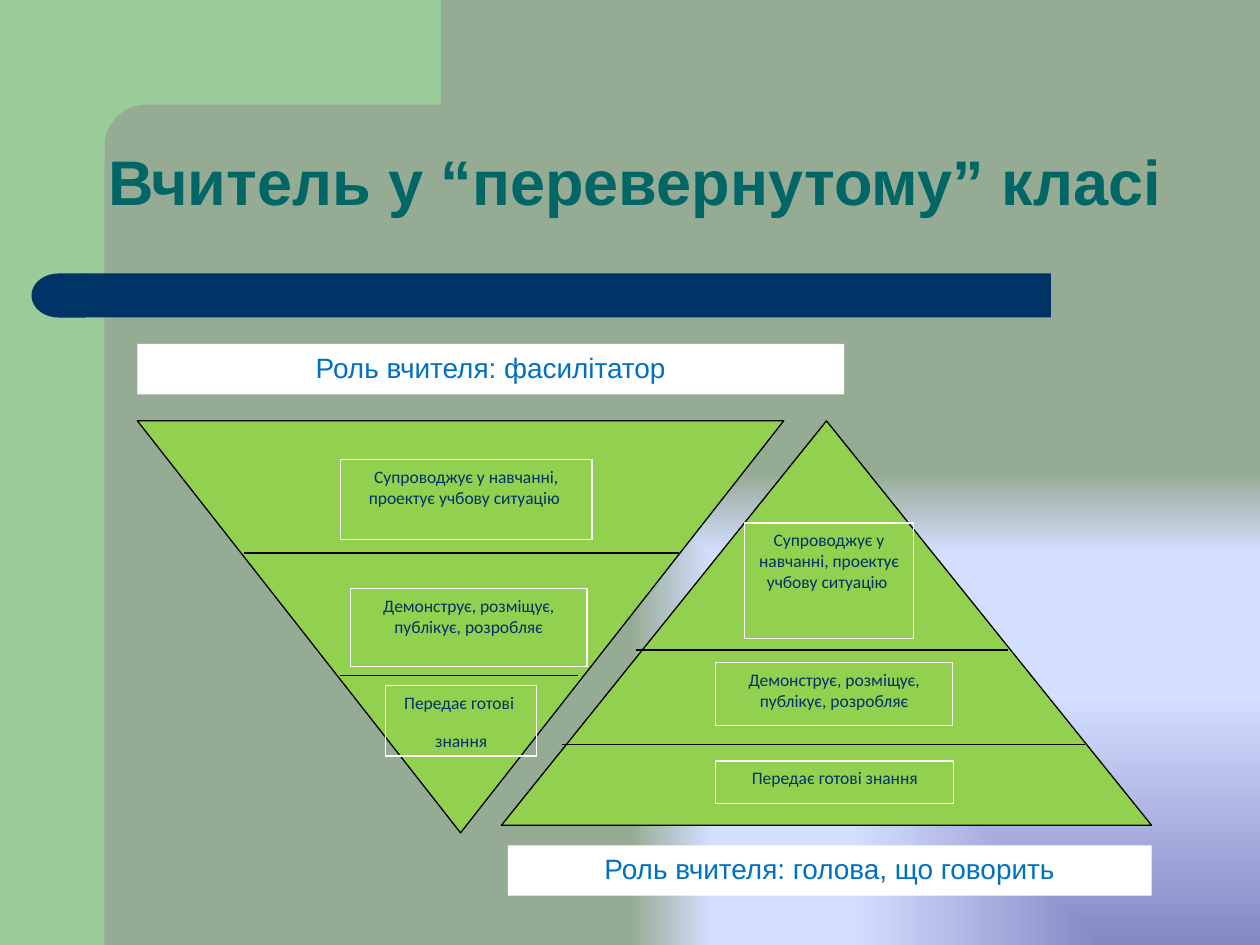
from math import cos, sin, pi
from pptx import Presentation
from pptx.util import Inches, Pt
from pptx.dml.color import RGBColor
from pptx.enum.shapes import MSO_SHAPE, MSO_CONNECTOR
from pptx.enum.text import PP_ALIGN, MSO_ANCHOR
from pptx.oxml import parse_xml
from pptx.oxml.ns import qn
from lxml.etree import SubElement

# Content: words, then left, top, width, height in inches
TITLE = "Вчитель у “перевернутому” класі", (0.39, 0.62, 9.3, 1.17)
GUIDE = "Супроводжує у навчанні, проектує учбову ситуацію "
SHOW = "Демонструє, розміщує, публікує, розробляє"
TELL = "Передає готові знання"

ROLES = [
    ("Роль вчителя: фасилітатор", (1.09, 2.73, 5.61, 0.4)),
    ("Роль вчителя: голова, що говорить", (4.03, 6.71, 5.11, 0.4)),
]
# Each pyramid: place, turn, dividers (x1, x2, y), labels
PYRAMIDS = [
    dict(at=(3.98, 3.34, 5.16, 3.21), turn=0,
         cuts=[(5.05, 8, 5.16), (4.46, 8.61, 5.91)],
         labels=[(GUIDE, (5.91, 4.15, 1.34, 0.92)),
                 (SHOW, (5.68, 5.26, 1.88, 0.5)),
                 (TELL, (5.68, 6.04, 1.89, 0.34))]),
    dict(at=(1.09, 3.34, 5.13, 3.27), turn=180,
         cuts=[(1.94, 5.39, 4.39), (2.7, 4.59, 5.36)],
         labels=[(GUIDE, (2.7, 3.65, 2, 0.63)),
                 (SHOW, (2.78, 4.67, 1.88, 0.62)),
                 ("Передає готові \nзнання", (3.06, 5.44, 1.2, 0.56))]),
]

THEME = dict(
    mint="99CC99", navy="003366", teal="006666", lime="92D050",
    blue="0070C0", white="FFFFFF", black="000000",
    head=36, role=16, label=10, line=0.75, sans="Arial", body="Calibri",
    back=[(0, "8488C4"), (53, "D4DEFF"), (83, "D4DEFF"), (100, "96AB94")],
)


def tint(name):
    return RGBColor.from_string(THEME[name])


def paint(shape, fill=None, line=None):
    shape.shadow.inherit = False
    if fill:
        shape.fill.solid()
        shape.fill.fore_color.rgb = tint(fill)
    else:
        shape.fill.background()
    if line:
        shape.line.color.rgb = tint(line)
        shape.line.width = Pt(THEME["line"])
    else:
        shape.line.fill.background()


def block(kind, at, fill=None, line=None, turn=0):
    shape = shapes.add_shape(kind, *map(Inches, at))
    paint(shape, fill, line)
    shape.rotation = turn
    return shape


def write(text, *, at, size, font, color, fill=None, line=None, bold=False,
          anchor=MSO_ANCHOR.TOP, after=10, gap=1.0):
    box = shapes.add_textbox(*map(Inches, at))
    paint(box, fill, line)
    frame = box.text_frame
    frame.word_wrap = True
    frame.vertical_anchor = anchor
    frame.text = text
    for para in frame.paragraphs:
        para.alignment = PP_ALIGN.CENTER
        para.space_after = Pt(after)
        para.line_spacing = gap
        para.font.size = Pt(THEME[size])
        para.font.name = THEME[font]
        para.font.bold = bold
        para.font.color.rgb = tint(color)


def rule(x1, x2, y):
    line = shapes.add_connector(MSO_CONNECTOR.STRAIGHT,
                                *map(Inches, (x1, y, x2, y)))
    line.line.color.rgb = tint("black")
    line.line.width = Pt(THEME["line"])
    SubElement(line._element.spPr, qn("a:effectLst"))


def backdrop(slide):
    stops = "".join(
        f'<a:gs pos="{pos * 1000}"><a:srgbClr val="{color}"/></a:gs>'
        for pos, color in THEME["back"])
    slide._element.cSld.insert(0, parse_xml(
        '<p:bg xmlns:p="http://schemas.openxmlformats.org/presentationml/2006/main"'
        ' xmlns:a="http://schemas.openxmlformats.org/drawingml/2006/main">'
        f'<p:bgPr><a:gradFill rotWithShape="0"><a:gsLst>{stops}</a:gsLst>'
        '<a:path path="rect"><a:fillToRect l="100000" t="100000"/></a:path>'
        '</a:gradFill><a:effectLst/></p:bgPr></p:bg>'))


def corner():
    # Band with a rounded inner corner
    mid, rad, steps = 1.16, 0.33, 16
    turns = [pi / 2 * i / steps for i in range(steps + 1)]
    arc = [(mid - rad * sin(t), mid - rad * cos(t)) for t in turns]
    points = [(3.5, 0.83), *arc, (0.83, 1.28), (0.5, 1.28), (0.5, 0)]
    path = shapes.build_freeform(Inches(3.5), 0)
    path.add_line_segments([(Inches(x), Inches(y)) for x, y in points])
    paint(path.convert_to_shape(), "mint")


deck = Presentation()
deck.slide_width, deck.slide_height = Inches(10), Inches(7.5)
slide = deck.slides.add_slide(deck.slide_layouts[6])
shapes = slide.shapes

# Frame and title bar
backdrop(slide)
block(MSO_SHAPE.RECTANGLE, (0, 0, 0.83, 7.5), "mint")
corner()
block(MSO_SHAPE.RECTANGLE, (0.67, 2.17, 7.67, 0.35), "navy")
block(MSO_SHAPE.FLOWCHART_DELAY, (0.25, 2.17, 0.43, 0.35), "navy", turn=180)
write(TITLE[0], at=TITLE[1], size="head", font="sans", color="teal",
      bold=True, anchor=MSO_ANCHOR.BOTTOM, after=0, gap=0.9)

# Pyramids with dividers and labels
for part in PYRAMIDS:
    block(MSO_SHAPE.ISOSCELES_TRIANGLE, part["at"], "lime", "black", part["turn"])
    for cut in part["cuts"]:
        rule(*cut)
    for text, at in part["labels"]:
        write(text, at=at, size="label", font="body", color="navy", line="white")

# Role captions
for text, at in ROLES:
    write(text, at=at, size="role", font="sans", color="blue", fill="white")

deck.save("out.pptx")
